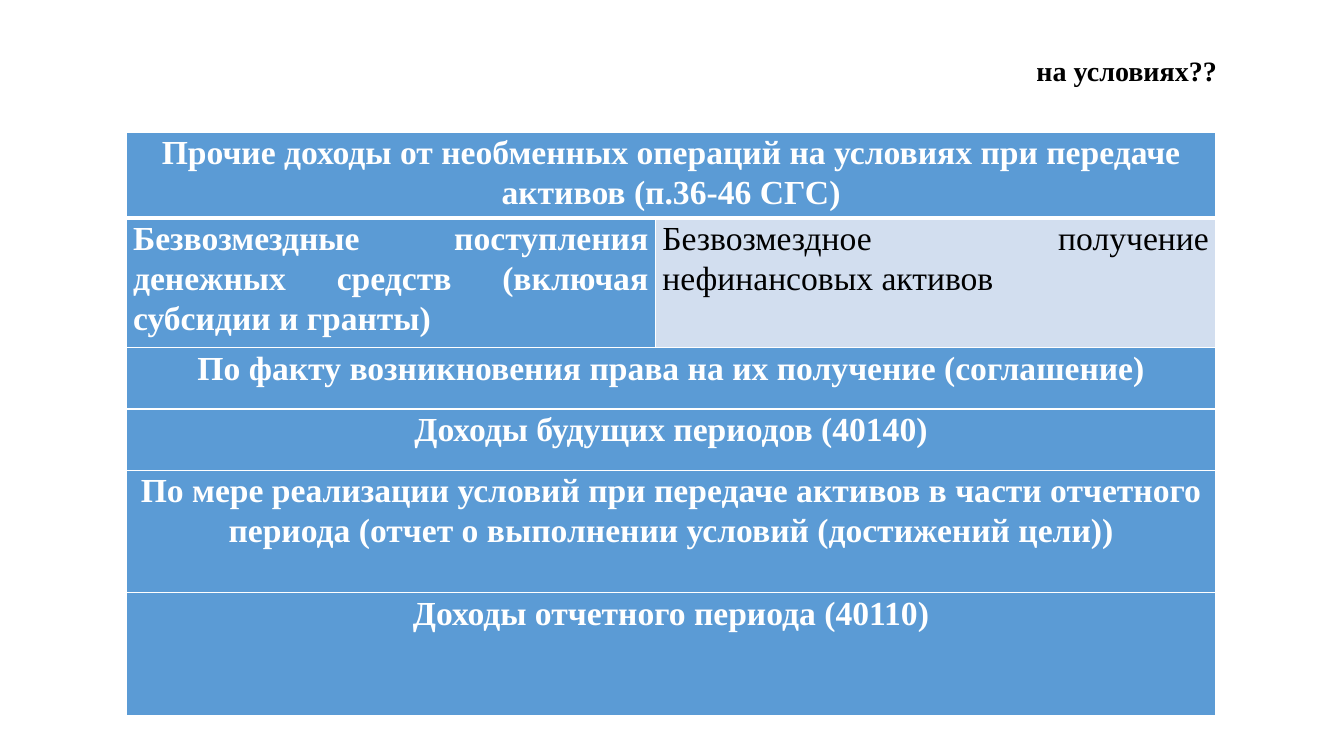
from dataclasses import dataclass

from lxml import etree
from pptx import Presentation
from pptx.dml.color import RGBColor
from pptx.enum.text import MSO_ANCHOR, PP_ALIGN
from pptx.oxml.ns import qn
from pptx.util import Inches, Pt

CENTER, RIGHT, JUST = PP_ALIGN.CENTER, PP_ALIGN.RIGHT, PP_ALIGN.JUSTIFY
TOP, MIDDLE = MSO_ANCHOR.TOP, MSO_ANCHOR.MIDDLE
WIDE, HIGH = Inches(13.33), Inches(7.5)
FONT = "Times New Roman"
WHITE, BLACK, BLUE, PALE = "FFFFFF", "000000", "5B9BD5", "D2DEEF"
COLS = (39.38, 41.71)


@dataclass(frozen=True)
class Cell:
    text: str
    align: int = CENTER
    fill: str = BLUE
    ink: str = WHITE
    bold: bool = True


@dataclass(frozen=True)
class Row:
    high: float
    cells: tuple[Cell, ...]


ROWS = (
    Row(11.4, (Cell("Прочие доходы от необменных операций на условиях при передаче активов (п.36-46 СГС)"),)),
    Row(17.13, (
        Cell("Безвозмездные поступления денежных средств (включая субсидии и гранты)", JUST),
        Cell("Безвозмездное получение нефинансовых активов", JUST, PALE, BLACK, False),
    )),
    Row(8.1, (Cell("По факту возникновения права на их получение (соглашение)"),)),
    Row(8.1, (Cell("Доходы будущих периодов (40140)"),)),
    Row(16.2, (Cell("По мере реализации условий при передаче активов в части отчетного периода (отчет о выполнении условий (достижений цели))"),)),
    Row(16.2, (Cell("Доходы отчетного периода (40110)"),)),
)


def across(share: float) -> int:
    return round(WIDE * share / 100)


def down(share: float) -> int:
    return round(HIGH * share / 100)


def color(code: str) -> RGBColor:
    return RGBColor.from_string(code)


def write(frame, text: str, *, size: float, ink: str, align: int,
          bold: bool = True, space: float = 1.0) -> None:
    frame.word_wrap = True
    para = frame.paragraphs[0]
    para.alignment = align
    para.line_spacing = space
    para.space_before = para.space_after = Pt(0)
    run = para.add_run()
    run.text = text
    run.font.name = FONT
    run.font.size = Pt(size)
    run.font.bold = bold
    run.font.color.rgb = color(ink)


def border(cell, base: float) -> None:
    props = cell._tc.get_or_add_tcPr()
    sides = {"lnL": 1, "lnR": 1, "lnT": 1, "lnB": base}
    for spot, (side, width) in enumerate(sides.items()):
        line = etree.Element(qn(f"a:{side}"), w=str(Pt(width)))
        fill = etree.SubElement(line, qn("a:solidFill"))
        etree.SubElement(fill, qn("a:srgbClr"), val=WHITE)
        props.insert(spot, line)


def style(cell, data: Cell, base: float) -> None:
    cell.fill.solid()
    cell.fill.fore_color.rgb = color(data.fill)
    cell.margin_left = cell.margin_right = Inches(0.07)
    cell.margin_top = cell.margin_bottom = 0
    cell.vertical_anchor = TOP
    border(cell, base)


def add_title(slide) -> None:
    title = slide.shapes.title
    title.left, title.top = across(5.85), down(6.13)
    title.width, title.height = across(85.45), down(9.87)
    frame = title.text_frame
    frame.vertical_anchor = MIDDLE
    frame.margin_bottom = Inches(0.32)
    write(frame, "на условиях??", size=20, ink=BLACK, align=RIGHT)


def add_grid(slide) -> None:
    high = sum(row.high for row in ROWS)
    grid = slide.shapes.add_table(
        len(ROWS), len(COLS), across(9.38), down(17.47),
        across(sum(COLS)), down(high)).table
    for col, share in zip(grid.columns, COLS):
        col.width = across(share)
    for y, row in enumerate(ROWS):
        grid.rows[y].height = down(row.high)
        base = 3 if y == 0 else 1
        for x in range(len(COLS)):
            data = row.cells[min(x, len(row.cells) - 1)]
            style(grid.cell(y, x), data, base)
        if len(row.cells) == 1:
            grid.cell(y, 0).merge(grid.cell(y, len(COLS) - 1))
        for x, data in enumerate(row.cells):
            write(grid.cell(y, x).text_frame, data.text, size=24,
                  ink=data.ink, align=data.align, bold=data.bold, space=1.07)


def main() -> None:
    deck = Presentation()
    deck.slide_width, deck.slide_height = WIDE, HIGH
    slide = deck.slides.add_slide(deck.slide_layouts[5])
    add_grid(slide)
    add_title(slide)
    deck.save("out.pptx")


if __name__ == "__main__":
    main()
